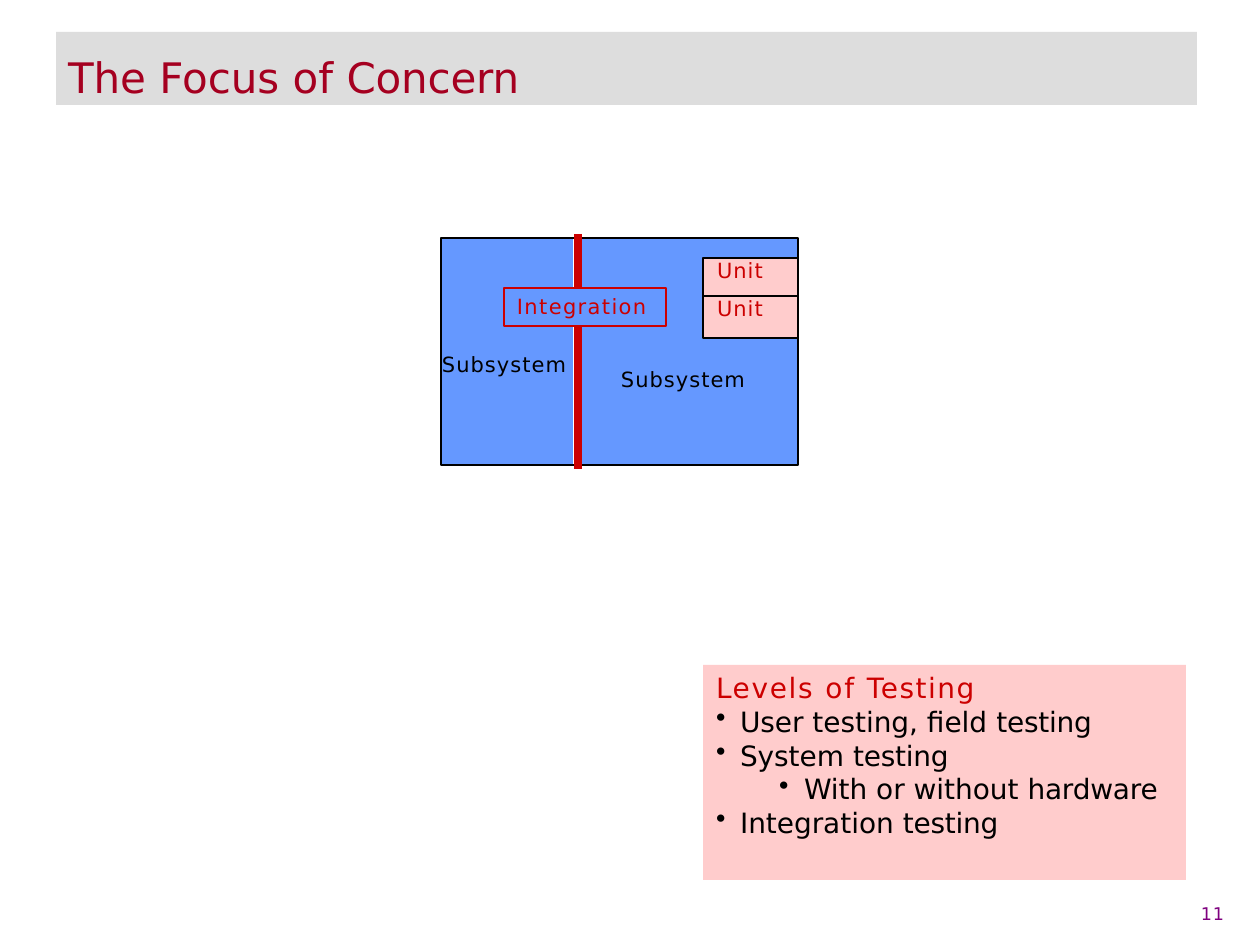
import pptx
import pptx.util
import pptx.dml.color
import pptx.enum.shapes
import pptx.enum.text
import pptx.oxml
import pptx.oxml.ns

EMU_PER_PX = 914400 / 126
FONT = "DejaVu Sans"
BLACK = pptx.dml.color.RGBColor(0x00, 0x00, 0x00)
GREY = pptx.dml.color.RGBColor(0xDD, 0xDD, 0xDD)
CRIMSON = pptx.dml.color.RGBColor(0xA5, 0x00, 0x20)
RED = pptx.dml.color.RGBColor(0xCC, 0x00, 0x00)
BLUE = pptx.dml.color.RGBColor(0x65, 0x98, 0xFF)
PINK = pptx.dml.color.RGBColor(0xFF, 0xCC, 0xCC)
PURPLE = pptx.dml.color.RGBColor(0x7F, 0x00, 0x7F)

LEVELS = [
    (0, ["User testing, field ", "testing"]),
    (0, ["System ", "testing"]),
    (1, ["With or without ", "hardware"]),
    (0, ["Integration ", "testing"]),
]


def px(length):
    return pptx.util.Emu(round(length * EMU_PER_PX))


def add_span(para, text, size, color, spacing=0):
    span = para.add_run()
    span.text = text
    span.font.name = FONT
    span.font.size = pptx.util.Pt(size)
    span.font.color.rgb = color
    if spacing:
        span._r.get_or_add_rPr().set("spc", str(round(spacing * 100)))


def set_indent(para, left, hanging=0):
    properties = para._p.get_or_add_pPr()
    properties.set("marL", str(px(left)))
    properties.set("indent", str(-px(hanging)))
    para.alignment = pptx.enum.text.PP_ALIGN.LEFT


def prepare_text(shape, top, indent, anchor=pptx.enum.text.MSO_ANCHOR.TOP):
    frame = shape.text_frame
    frame.word_wrap = True
    frame.auto_size = pptx.enum.text.MSO_AUTO_SIZE.NONE
    frame.vertical_anchor = anchor
    frame.margin_left = frame.margin_right = frame.margin_bottom = 0
    frame.margin_top = px(top)
    para = frame.paragraphs[0]
    set_indent(para, indent)
    return para


def add_box(page, left, top, width, height, fill=None, line=None):
    box = page.shapes.add_shape(
        pptx.enum.shapes.MSO_SHAPE.RECTANGLE, px(left), px(top), px(width), px(height))
    box.shadow.inherit = False
    if fill is None:
        box.fill.background()
    else:
        box.fill.solid()
        box.fill.fore_color.rgb = fill
    if line is None:
        box.line.fill.background()
    else:
        box.line.color.rgb = line
        box.line.width = pptx.util.Pt(0.75)
    return box


def add_label(page, left, top, width, height, text, size, color, spacing, indent):
    box = page.shapes.add_textbox(px(left), px(top), px(width), px(height))
    add_span(prepare_text(box, 1, indent), text, size, color, spacing)


def add_title(page):
    title = page.shapes.title
    title.left, title.top, title.width, title.height = px(56), px(32), px(1141), px(73)
    title.fill.solid()
    title.fill.fore_color.rgb = GREY
    para = prepare_text(title, 16, 12, pptx.enum.text.MSO_ANCHOR.MIDDLE)
    add_span(para, "The Focus of ", 24, CRIMSON)
    add_span(para, "Concern", 24, CRIMSON, -0.1)


def add_subsystem(page, fill_left, fill_width, frame_left, frame_width, label_left, label_top):
    add_box(page, fill_left, 238, fill_width, 227, fill=BLUE)
    add_box(page, frame_left, 238, frame_width, 227, line=BLACK)
    add_label(page, label_left, label_top, 132, 29, "Subsystem", 12, BLACK, 0.6, 1)


def add_divider(page, top, bottom):
    divider = page.shapes.add_connector(
        pptx.enum.shapes.MSO_CONNECTOR.STRAIGHT, px(578), px(top), px(578), px(bottom))
    divider.line.color.rgb = RED
    divider.line.width = pptx.util.Pt(4.62)
    divider._element.spPr.append(pptx.oxml.parse_xml(
        "<a:effectLst %s/>" % pptx.oxml.ns.nsdecls("a")))


def add_integration(page):
    add_divider(page, 234, 288)
    add_divider(page, 326, 469)
    box = add_box(page, 504, 288, 162, 38, fill=BLUE, line=RED)
    add_span(prepare_text(box, 6, 13), "Integration", 12, RED, 0.8)


def add_unit(page, top, height):
    box = add_box(page, 703, top, 95, height, fill=PINK, line=BLACK)
    add_span(prepare_text(box, 0, 14), "Unit", 12, RED, 0.6)


def add_bullet(para, level, texts):
    para.level = level
    set_indent(para, *((101, 25) if level else (37, 24)))
    bullet = pptx.oxml.parse_xml(
        '<a:buChar %s char="•"/>' % pptx.oxml.ns.nsdecls("a"))
    para._p.get_or_add_pPr().append(bullet)
    for text, spacing in zip(texts, (0, -0.1)):
        add_span(para, text, 16, BLACK, spacing)


def add_levels(page):
    box = add_box(page, 703, 665, 483, 215, fill=PINK)
    heading = prepare_text(box, 6, 13)
    for text, spacing in (("Levels ", 1), ("of ", 1.1), ("Testing", 0.9)):
        add_span(heading, text, 16, RED, spacing)
    for level, texts in LEVELS:
        add_bullet(box.text_frame.add_paragraph(), level, texts)


def main():
    deck = pptx.Presentation()
    deck.slide_width, deck.slide_height = px(1260), px(945)
    page = deck.slides.add_slide(deck.slide_layouts[5])
    add_title(page)
    add_subsystem(page, 441, 132, 441, 137, 441, 351)
    add_subsystem(page, 582, 216, 578, 220, 620, 366)
    add_integration(page)
    add_unit(page, 258, 39)
    add_unit(page, 296, 42)
    add_levels(page)
    add_label(page, 1196, 902, 37, 25, "11", 10, PURPLE, 0.5, 5)
    deck.save("out.pptx")


if __name__ == "__main__":
    main()
